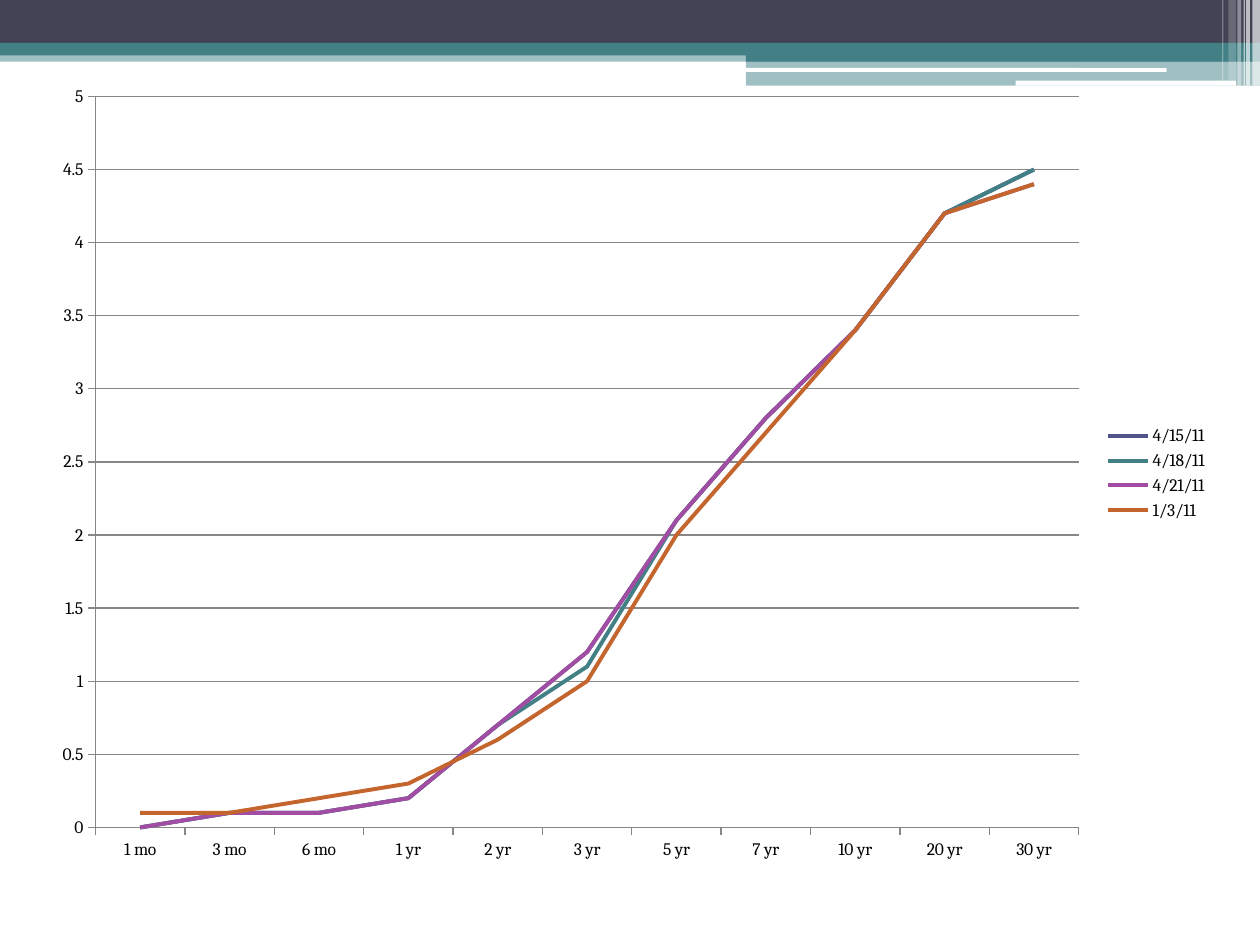
from lxml.etree import SubElement
from pptx import Presentation
from pptx.chart.data import CategoryChartData
from pptx.dml.color import RGBColor
from pptx.enum.chart import XL_CHART_TYPE, XL_LEGEND_POSITION, XL_TICK_MARK
from pptx.enum.shapes import MSO_SHAPE
from pptx.oxml.ns import qn
from pptx.util import Inches, Pt

COLORS = {"navy": "424456", "teal": "438086", "white": "FFFFFF", "text": "000000",
          "axis": "878787", "indigo": "53548A", "purple": "A04DA3", "orange": "C4652D"}
FONT = "Cambria"
WIDTH, HEIGHT = 10, 7.5

# Yields by maturity, one curve per date
MATURITIES = ["1 mo", "3 mo", "6 mo", "1 yr", "2 yr", "3 yr",
              "5 yr", "7 yr", "10 yr", "20 yr", "30 yr"]
CURVES = [
    ("4/15/11", "indigo", (0, 0.1, 0.1, 0.2, 0.7, 1.2, 2.1, 2.8, 3.4, 4.2, 4.5)),
    ("4/18/11", "teal", (0, 0.1, 0.1, 0.2, 0.7, 1.1, 2.1, 2.8, 3.4, 4.2, 4.5)),
    ("4/21/11", "purple", (0, 0.1, 0.1, 0.2, 0.7, 1.2, 2.1, 2.8, 3.4, 4.2, 4.4)),
    ("1/3/11", "orange", (0.1, 0.1, 0.2, 0.3, 0.6, 1, 2, 2.7, 3.4, 4.2, 4.4)),
]

# Header bands: left, top, height, colour, opacity %; each runs to the right edge
BANDS = [(0, 0.4, 0.09, "teal", 50), (0, 0, 0.34, "navy", 100),
         (0, 0.34, 0.1, "teal", 100), (5.92, 0.39, 0.1, "teal", 100),
         (5.92, 0.48, 0.2, "teal", 50)]
# White slots cut into the bands: left, top, width, height
SLOTS = [(5.91, 0.54, 3.35, 0.03), (8.06, 0.64, 1.75, 0.04)]
# Pale vertical stripes from the top edge: left, width, height, opacity %
STRIPES = [(9.94, 0.06, 0.68, 65), (9.89, 0.03, 0.68, 65), (9.87, 0.01, 0.68, 60),
           (9.82, 0.03, 0.68, 40), (9.75, 0.06, 0.64, 20), (9.7, 0.01, 0.64, 30)]


def rgb(color):
    return RGBColor.from_string(COLORS[color])


def add_block(slide, box, color, opacity=100, kind=MSO_SHAPE.RECTANGLE):
    block = slide.shapes.add_shape(kind, *map(Inches, box))
    block.shadow.inherit = False
    block.line.fill.background()
    block.fill.solid()
    block.fill.fore_color.rgb = rgb(color)
    if opacity < 100:
        tint = block.fill._xPr.find(f".//{qn('a:srgbClr')}")
        SubElement(tint, qn("a:alpha"), val=str(opacity * 1000))


def add_header(slide):
    for left, top, height, color, opacity in BANDS:
        add_block(slide, (left, top, WIDTH - left, height), color, opacity)
    for slot in SLOTS:
        add_block(slide, slot, "white", kind=MSO_SHAPE.ROUNDED_RECTANGLE)
    for left, width, height, opacity in STRIPES:
        add_block(slide, (left, 0, width, height), "white", opacity)


def style_line(line, color, width):
    line.color.rgb = rgb(color)
    line.width = Pt(width)


def add_yield_chart(slide):
    data = CategoryChartData()
    data.categories = MATURITIES
    for date, _, yields in CURVES:
        data.add_series(date, yields)
    box = map(Inches, (0.31, 0.56, 9.38, 6.39))
    chart = slide.shapes.add_chart(XL_CHART_TYPE.LINE, *box, data).chart
    chart.has_title = False
    chart.font.name = FONT
    chart.font.size = Pt(10)
    chart.font.color.rgb = rgb("text")

    # Legend
    chart.has_legend = True
    chart.legend.position = XL_LEGEND_POSITION.RIGHT
    chart.legend.include_in_layout = False

    # Axes and gridlines
    for axis in (chart.category_axis, chart.value_axis):
        axis.major_tick_mark = XL_TICK_MARK.OUTSIDE
        axis.minor_tick_mark = XL_TICK_MARK.NONE
        style_line(axis.format.line, "axis", 0.75)
    yields_axis = chart.value_axis
    yields_axis.minimum_scale, yields_axis.maximum_scale = 0, 5
    yields_axis.major_unit = 0.5
    yields_axis.has_major_gridlines = True
    style_line(yields_axis.major_gridlines.format.line, "axis", 0.75)

    # Curves
    plot = chart.plots[0]
    plot.vary_by_categories = False
    for curve, (_, color, _) in zip(plot.series, CURVES):
        curve.smooth = False
        style_line(curve.format.line, color, 2.25)


def main():
    deck = Presentation()
    deck.slide_width, deck.slide_height = Inches(WIDTH), Inches(HEIGHT)
    slide = deck.slides.add_slide(deck.slide_layouts[6])
    add_header(slide)
    add_yield_chart(slide)
    deck.save("out.pptx")


if __name__ == "__main__":
    main()
